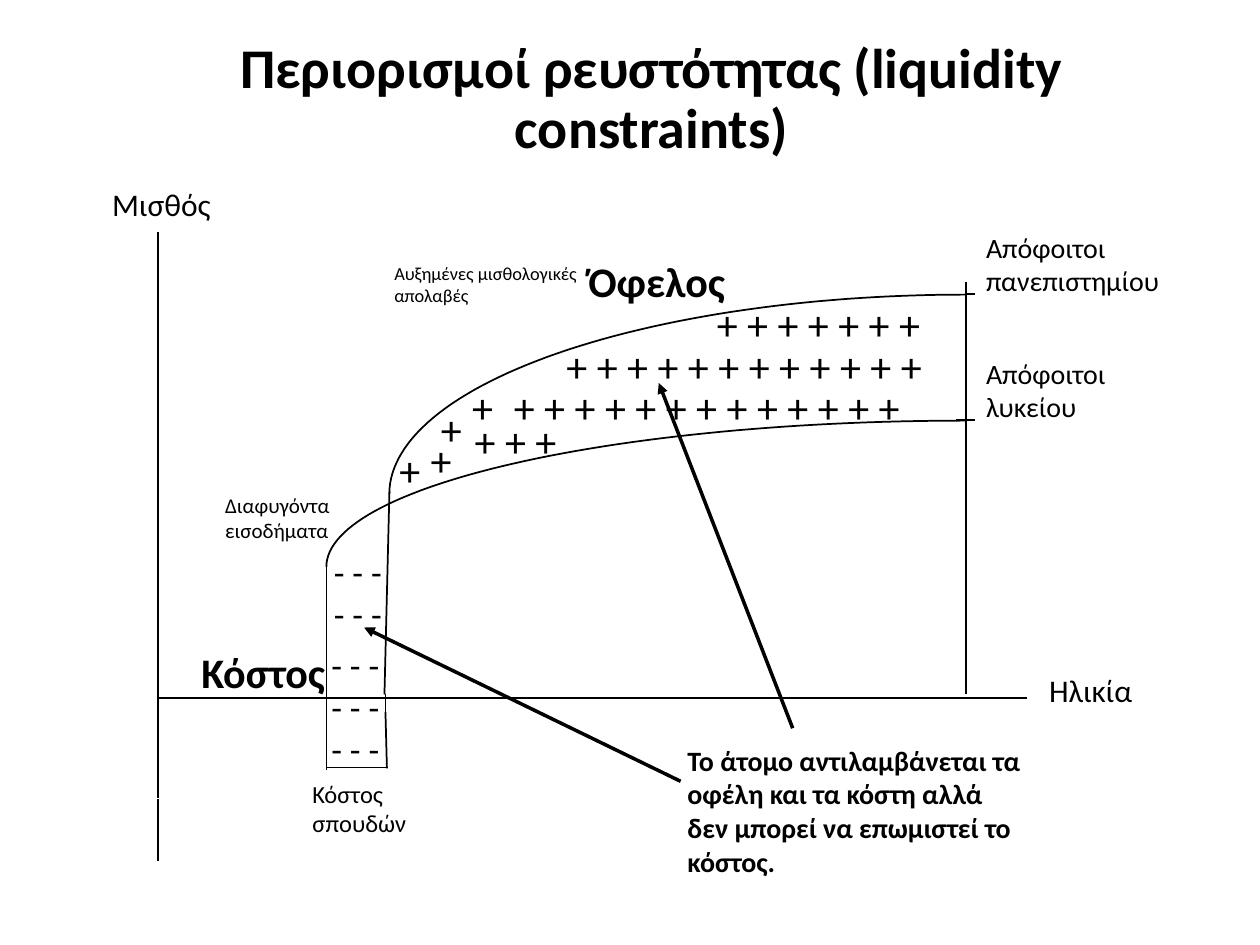
from math import cos, pi, sin

from lxml import etree
from pptx import Presentation
from pptx.dml import color
from pptx.enum import shapes, text
from pptx.oxml import ns
from pptx.util import Cm, Pt

INK = "000000"
FONT = "Calibri"

# Straight lines: x1, y1, x2, y2 in cm
AXES = [
    (3.18, 4.67, 3.18, 16.08),
    (3.18, 16.1, 3.18, 17.35),
    (3.18, 14.07, 20.7, 14.07),
]
GUIDES = [
    (19.48, 14, 19.48, 5.69),
    (19.48, 5.92, 19.66, 5.92),
    (19.28, 8.46, 19.66, 8.46),
]
COST = [
    (6.58, 14, 6.58, 11.4),
    (6.58, 14, 6.58, 15.52),
    (7.75, 14, 7.85, 9.91),
    (7.77, 14, 7.77, 14.38),
    (7.77, 14.35, 7.8, 15.49),
    (7.8, 15.47, 6.58, 15.47),
]
ARROWS = [
    (13.72, 15.75, 7.34, 12.65),
    (15.98, 14.68, 13.28, 7.72),
]

# Wage curves: start and end of a quarter ellipse
CURVES = [
    (7.85, 9.96, 19.48, 5.94),
    (6.58, 11.43, 19.48, 8.48),
]

# Plus signs: left, top, width, count
PLUSES = [
    (14.2, 5.89, 5.31, 7),
    (11.17, 6.73, 8.56, 12),
    (10.11, 7.57, 9.78, 13),
    (9.32, 8.26, 2.36, 3),
    (9.27, 7.57, 0.99, 1),
    (8.64, 8, 0.99, 1),
    (8.43, 8.64, 0.99, 1),
    (7.8, 8.84, 0.99, 1),
]

# Minus signs: left, top, width, height, rows
MINUSES = [
    (6.48, 10.97, 2.16, 1.96, 2),
    (6.43, 12.85, 1.78, 2.82, 3),
]

# Labels: words, left, top, width, height, size, bold, wrap
LABELS = [
    ("Μισθός", 2.01, 3.61, 2.51, 1.02, 18, False, False),
    ("Ηλικία", 20.9, 13.41, 2.21, 1.02, 18, False, False),
    ("Όφελος", 11.61, 5.03, 3.28, 1.27, 24, True, False),
    ("Κόστος", 3.81, 12.9, 3.02, 1.27, 24, True, False),
    ("Απόφοιτοι πανεπιστημίου", 19.63, 4.52, 4.9, 1.63, 16, False, True),
    ("Απόφοιτοι λυκείου", 19.63, 7.06, 4.42, 1.63, 16, False, True),
    ("Διαφυγόντα εισοδήματα", 4.29, 9.8, 2.79, 1.27, 12, False, True),
    ("Κόστος σπουδών", 6.05, 15.57, 2.67, 1.45, 14, False, True),
    ("Αυξημένες μισθολογικές απολαβές", 7.7, 5.16, 4.19, 1.14, 10.5,
     False, True),
    ("Το άτομο αντιλαμβάνεται τα οφέλη και τα κόστη αλλά δεν μπορεί "
     "να επωμιστεί το κόστος.", 13.61, 14.86, 7.29, 3, 16, True, True),
]


def rgb(code):
    return color.RGBColor.from_string(code)


def put(item, values):
    for name, value in values.items():
        setattr(item, name, value)


def write(slide, words, left, top, width, height, size,
          bold=False, wrap=True, **para):
    """Add a text box, one paragraph to each line of words."""
    box = slide.shapes.add_textbox(Cm(left), Cm(top), Cm(width), Cm(height))
    frame = box.text_frame
    frame.word_wrap = wrap
    frame.text = words
    for line in frame.paragraphs:
        put(line, para)
        put(line.font, {"name": FONT, "size": Pt(size), "bold": bold})
        line.font.color.rgb = rgb(INK)
    return frame


def stroke(item, width):
    item.line.width = Pt(width)
    item.line.color.rgb = rgb(INK)


def rule(slide, ends, width=1, arrow=False):
    """Add a straight line, with an arrowhead at its end if asked."""
    line = slide.shapes.add_connector(
        shapes.MSO_CONNECTOR.STRAIGHT, *[Cm(end) for end in ends])
    stroke(line, width)
    if arrow:
        etree.SubElement(line.line._get_or_add_ln(), ns.qn("a:tailEnd"),
                         type="triangle")
    etree.SubElement(line._element.spPr, ns.qn("a:effectLst"))


def curve(slide, x1, y1, x2, y2, steps=60):
    """Add a quarter ellipse that starts upright and ends level."""
    turns = [pi / 2 * step / steps for step in range(1, steps + 1)]
    points = [(Cm(x1 + (x2 - x1) * (1 - cos(turn))),
               Cm(y1 + (y2 - y1) * sin(turn))) for turn in turns]
    pen = slide.shapes.build_freeform(Cm(x1), Cm(y1))
    pen.add_line_segments(points, close=False)
    arc = pen.convert_to_shape()
    arc.fill.background()
    arc.shadow.inherit = False
    stroke(arc, 1)


def main():
    deck = Presentation()
    put(deck, {"slide_width": Cm(25.4), "slide_height": Cm(19.05)})
    slide = deck.slides.add_slide(deck.slide_layouts[6])

    # Title
    title = write(slide, "Περιορισμοί ρευστότητας (liquidity constraints)",
                  2.34, 0.43, 21.59, 3.18, 32, True,
                  alignment=text.PP_ALIGN.CENTER, line_spacing=0.9)
    title.vertical_anchor = text.MSO_ANCHOR.MIDDLE

    # Axes, guides and cost area
    for ends in AXES + GUIDES + COST:
        rule(slide, ends)

    # Wage curves
    for ends in CURVES:
        curve(slide, *ends)

    # Signs of gain and loss
    for left, top, width, count in PLUSES:
        write(slide, " ".join("+" * count), left, top, width, 1.27, 24,
              wrap=False)
    for left, top, width, height, rows in MINUSES:
        write(slide, "\n".join(["- - -"] * rows), left, top, width, height, 20)

    # Labels and arrows
    for label in LABELS:
        write(slide, *label)
    for ends in ARROWS:
        rule(slide, ends, 2, True)

    deck.save("out.pptx")


if __name__ == "__main__":
    main()
